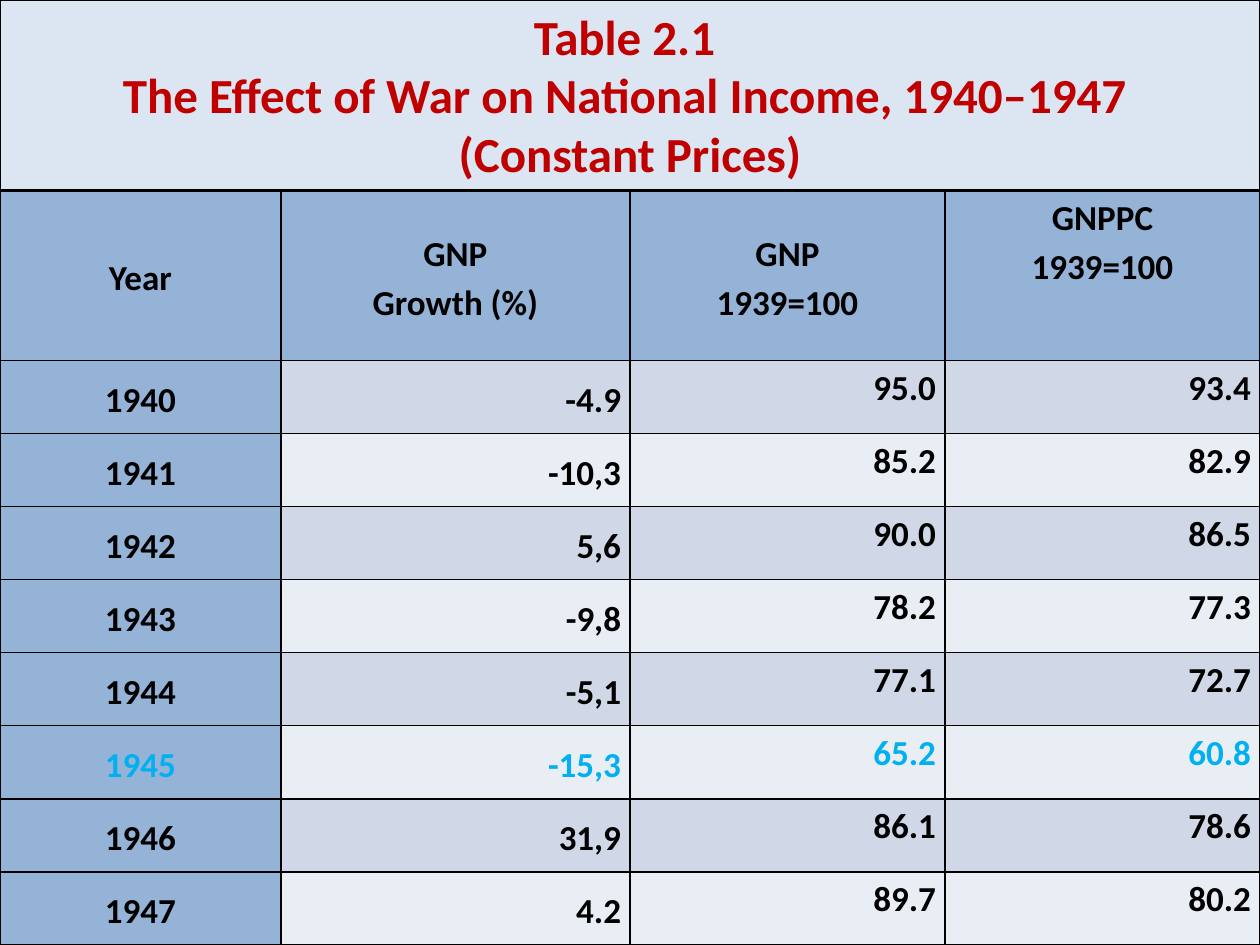
from dataclasses import dataclass

from lxml.etree import SubElement
from pptx import Presentation
from pptx.dml.color import RGBColor as RGB
from pptx.enum.shapes import MSO_SHAPE as Shape
from pptx.enum.text import MSO_ANCHOR as Anchor, PP_ALIGN as Align
from pptx.oxml.ns import qn
from pptx.util import Cm, Pt

TITLE = [
    "Table 2.1 ",
    "The Effect of War on National Income, 1940–1947 ",
    "(Constant Prices)",
]
HEADERS = [["Year"], ["GNP", "Growth (%)"], ["GNP", "1939=100"], ["GNPPC", "1939=100"]]
RECORDS = [
    ("1940", "-4.9", "95.0", "93.4"),
    ("1941", "-10,3", "85.2", "82.9"),
    ("1942", "5,6", "90.0", "86.5"),
    ("1943", "-9,8", "78.2", "77.3"),
    ("1944", "-5,1", "77.1", "72.7"),
    ("1945", "-15,3", "65.2", "60.8"),
    ("1946", "31,9", "86.1", "78.6"),
    ("1947", "4.2", "89.7", "80.2"),
]
HIGHLIGHT_YEAR = "1945"
HEADER_ANCHORS = [Anchor.MIDDLE, Anchor.MIDDLE, Anchor.MIDDLE, Anchor.TOP]
RECORD_ANCHORS = [Anchor.MIDDLE, Anchor.MIDDLE, Anchor.TOP, Anchor.TOP]

WIDTH, HEIGHT = 25.4, 19.05
TITLE_HEIGHT, HEADER_HEIGHT = 3.84, 3.43
COLUMN_WIDTHS = [5.66, 7.04, 6.35, 6.35]


@dataclass(frozen=True)
class Theme:
    font: str = "Calibri"
    title_size: int = 28
    table_size: int = 20
    title: str = "C00000"
    title_fill: str = "DCE6F2"
    text: str = "000000"
    highlight: str = "00B0F0"
    line: str = "000000"
    header_fill: str = "95B3D7"
    bands: tuple = ("D0D8E8", "E9EDF4")


THEME = Theme()


def write_lines(frame, lines, size, color, align, spacing=None):
    for index, line in enumerate(lines):
        paragraph = frame.paragraphs[0] if index == 0 else frame.add_paragraph()
        paragraph.alignment = align
        paragraph.line_spacing = spacing
        run = paragraph.add_run()
        run.text = line
        run.font.name = THEME.font
        run.font.size = Pt(size)
        run.font.bold = True
        run.font.color.rgb = RGB.from_string(color)


def add_borders(cell, color, width):
    properties = cell._tc.get_or_add_tcPr()
    for side in ("a:lnL", "a:lnR", "a:lnT", "a:lnB"):
        line = SubElement(properties, qn(side), w=str(Pt(width)))
        fill = SubElement(line, qn("a:solidFill"))
        SubElement(fill, qn("a:srgbClr"), val=color)


def fill_cell(cell, lines, fill, color, align, anchor):
    add_borders(cell, THEME.line, 1)
    cell.fill.solid()
    cell.fill.fore_color.rgb = RGB.from_string(fill)
    cell.margin_left = cell.margin_right = Cm(0.18)
    cell.margin_top = cell.margin_bottom = 0
    cell.vertical_anchor = anchor
    write_lines(cell.text_frame, lines, THEME.table_size, color, align, 1.15)


def add_income_table(slide):
    table = slide.shapes.add_table(
        len(RECORDS) + 1, len(HEADERS),
        Cm(0), Cm(TITLE_HEIGHT), Cm(WIDTH), Cm(HEIGHT - TITLE_HEIGHT),
    ).table
    for column, width in zip(table.columns, COLUMN_WIDTHS):
        column.width = Cm(width)
    record_height = (HEIGHT - TITLE_HEIGHT - HEADER_HEIGHT) / len(RECORDS)
    for index, row in enumerate(table.rows):
        row.height = Cm(record_height if index else HEADER_HEIGHT)

    for column, (lines, anchor) in enumerate(zip(HEADERS, HEADER_ANCHORS)):
        fill_cell(table.cell(0, column), lines, THEME.header_fill,
                  THEME.text, Align.CENTER, anchor)
    for index, record in enumerate(RECORDS):
        color = THEME.highlight if record[0] == HIGHLIGHT_YEAR else THEME.text
        for column, (value, anchor) in enumerate(zip(record, RECORD_ANCHORS)):
            fill = THEME.bands[index % 2] if column else THEME.header_fill
            align = Align.RIGHT if column else Align.CENTER
            fill_cell(table.cell(index + 1, column), [value], fill, color, align, anchor)


def add_title(slide):
    shape = slide.shapes.add_shape(
        Shape.RECTANGLE, Cm(0), Cm(0), Cm(WIDTH), Cm(TITLE_HEIGHT))
    shape.shadow.inherit = False
    shape.fill.solid()
    shape.fill.fore_color.rgb = RGB.from_string(THEME.title_fill)
    shape.line.color.rgb = RGB.from_string(THEME.line)
    shape.line.width = Pt(1.5)
    frame = shape.text_frame
    frame.word_wrap = True
    frame.vertical_anchor = Anchor.TOP
    write_lines(frame, TITLE, THEME.title_size, THEME.title, Align.CENTER)


def main():
    """Build the national income slide."""
    presentation = Presentation()
    presentation.slide_width = Cm(WIDTH)
    presentation.slide_height = Cm(HEIGHT)
    slide = presentation.slides.add_slide(presentation.slide_layouts[6])
    add_income_table(slide)
    add_title(slide)
    presentation.save("out.pptx")


if __name__ == "__main__":
    main()
